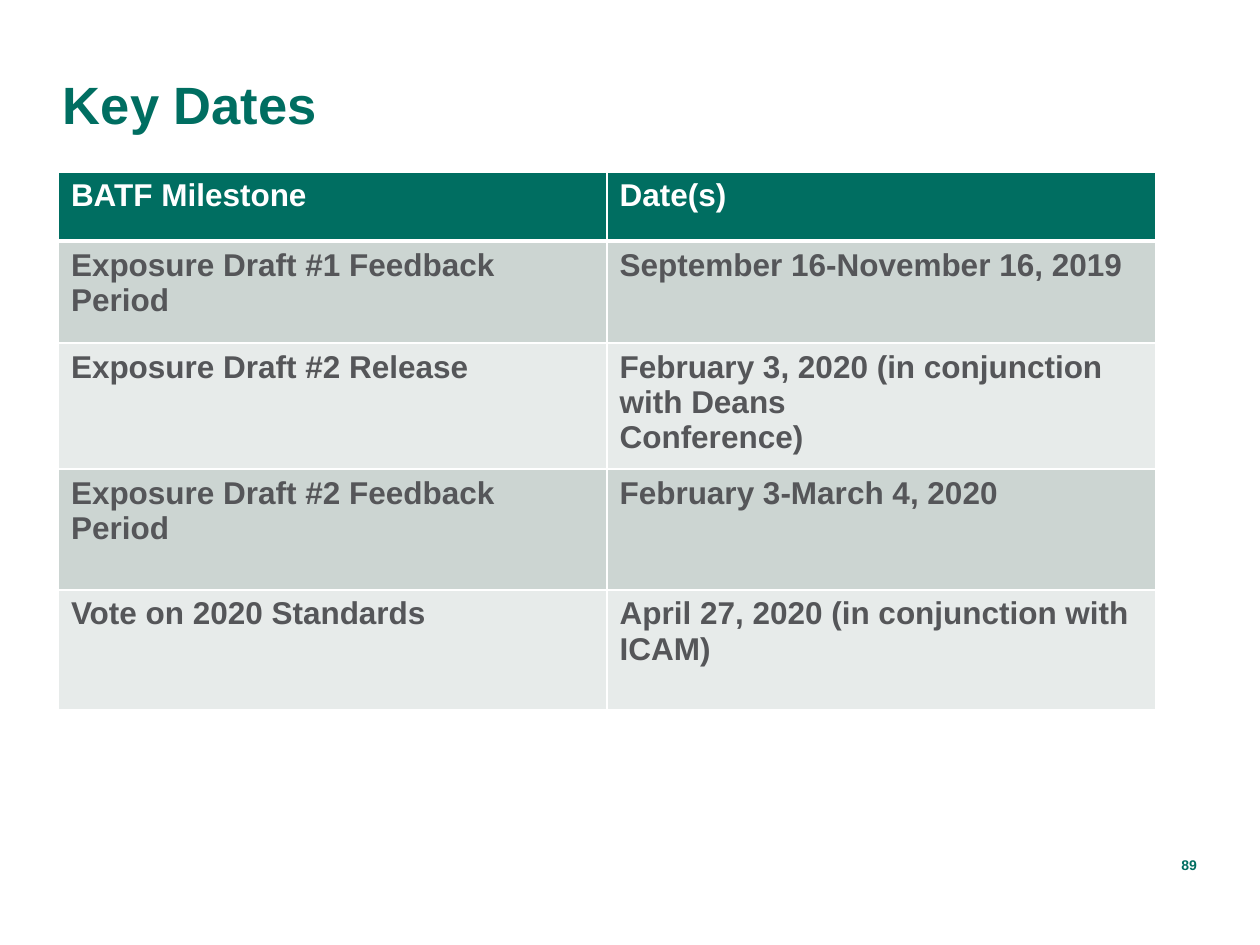
from dataclasses import dataclass

from lxml import etree
from pptx import Presentation
from pptx.dml.color import RGBColor
from pptx.enum.text import MSO_ANCHOR, PP_ALIGN
from pptx.oxml.ns import qn
from pptx.util import Pt

LEFT, RIGHT = PP_ALIGN.LEFT, PP_ALIGN.RIGHT
MIDDLE, BOTTOM = MSO_ANCHOR.MIDDLE, MSO_ANCHOR.BOTTOM


@dataclass(frozen=True)
class Theme:
    font: str = "Arial"
    green: str = "006E61"
    white: str = "FFFFFF"
    gray: str = "555659"
    bands: tuple = ("CCD5D2", "E7EBEA")
    title: int = 30
    body: int = 18
    small: int = 8
    thin: int = 1
    thick: int = 3


THEME = Theme()

DATES = [
    ("BATF Milestone", "Date(s)"),
    ("Exposure Draft #1 Feedback Period", "September 16-November 16, 2019"),
    ("Exposure Draft #2 Release",
     "February 3, 2020 (in conjunction with Deans\nConference)"),
    ("Exposure Draft #2 Feedback Period", "February 3-March 4, 2020"),
    ("Vote on 2020 Standards", "April 27, 2020 (in conjunction with ICAM)"),
]
HEIGHTS = (39.6, 58.3, 70.6, 69.1, 68.4)


def style(frame, size, color, align=LEFT):
    """Format every paragraph of a text frame."""
    look = {"name": THEME.font, "size": Pt(size), "bold": True}
    for para in frame.paragraphs:
        para.alignment = align
        for run in para.runs:
            for key, value in look.items():
                setattr(run.font, key, value)
            run.font.color.rgb = RGBColor.from_string(color)


def add_text(slide, box, text, size, anchor, align=LEFT, space=1.0):
    """Place one green label in the box."""
    frame = slide.shapes.add_textbox(*map(Pt, box)).text_frame
    setup = {"word_wrap": True, "vertical_anchor": anchor, "margin_left": 0,
             "margin_top": 0, "margin_right": 0, "margin_bottom": 0}
    for key, value in setup.items():
        setattr(frame, key, value)
    frame.text = text
    frame.paragraphs[0].line_spacing = space
    style(frame, size, THEME.green, align)


def add_edges(cell, widths):
    """Draw white cell borders, which must come before the fill."""
    props = cell._tc.get_or_add_tcPr()
    for spot, (side, width) in enumerate(widths.items()):
        line = etree.Element(qn(f"a:ln{side}"), w=str(Pt(width)))
        fill = etree.SubElement(line, qn("a:solidFill"))
        etree.SubElement(fill, qn("a:srgbClr"), val=THEME.white)
        props.insert(spot, line)


def add_dates(slide, box, rows, heights):
    """Place the table of milestones in the box."""
    count = len(rows[0])
    table = slide.shapes.add_table(len(rows), count, *map(Pt, box)).table
    for col in table.columns:
        col.width = Pt(box[2] / count)
    for r, (texts, height) in enumerate(zip(rows, heights)):
        table.rows[r].height = Pt(height)
        head = r == 0
        back = THEME.green if head else THEME.bands[(r - 1) % 2]
        ink = THEME.white if head else THEME.gray
        edges = {"L": THEME.thin, "R": THEME.thin,
                 "T": THEME.thick if r == 1 else THEME.thin,
                 "B": THEME.thick if head else THEME.thin}
        for c, text in enumerate(texts):
            cell = table.cell(r, c)
            cell.text = text
            cell.fill.solid()
            cell.fill.fore_color.rgb = RGBColor.from_string(back)
            add_edges(cell, edges)
            style(cell.text_frame, THEME.body, ink)


def main():
    deck = Presentation()
    deck.slide_width, deck.slide_height = Pt(720), Pt(540)
    slide = deck.slides.add_slide(deck.slide_layouts[6])

    # Title
    add_text(slide, (36, 13, 648, 96.5), "Key Dates", THEME.title, MIDDLE,
             space=0.9)
    # Page number
    add_text(slide, (636.5, 486.7, 47.5, 12.2), "89", THEME.small, BOTTOM,
             RIGHT)
    # Milestones
    add_dates(slide, (33.4, 98.2, 627, sum(HEIGHTS)), DATES, HEIGHTS)

    deck.save("out.pptx")


if __name__ == "__main__":
    main()
